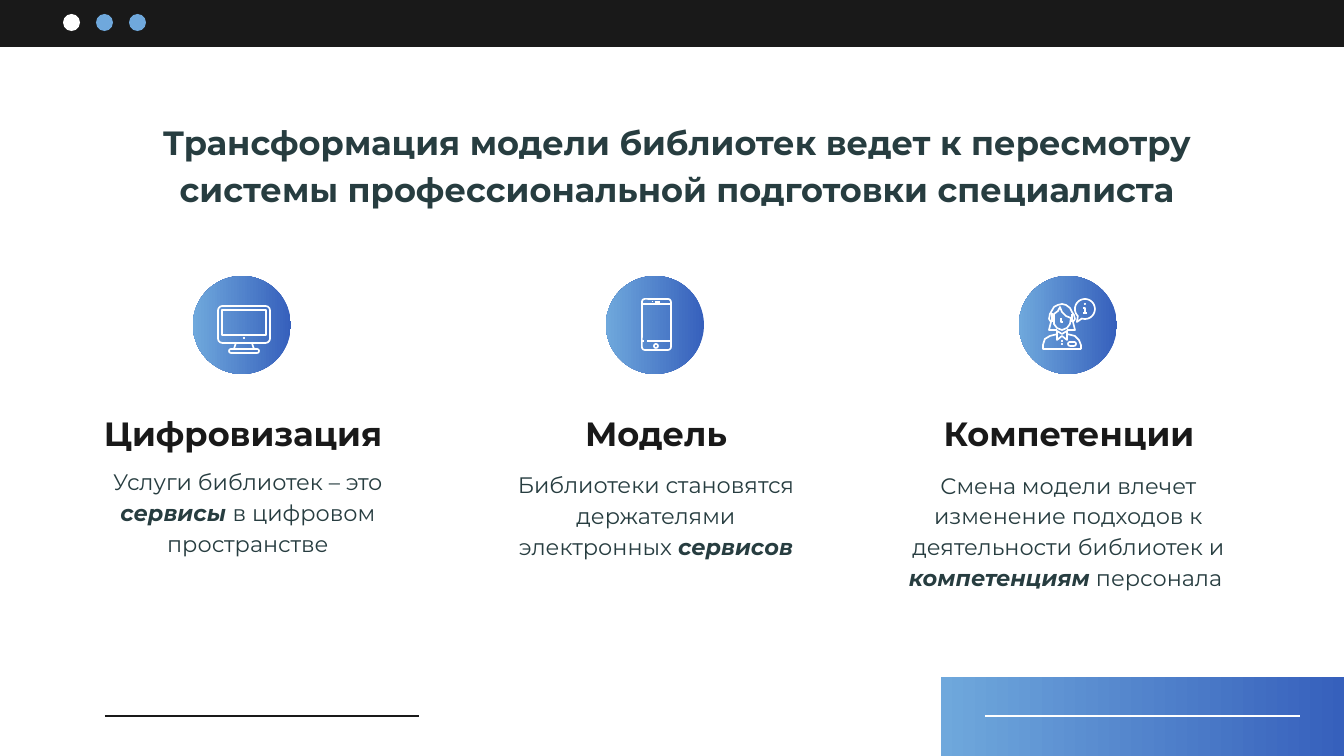
import math

from lxml import etree
from pptx import Presentation
from pptx.dml.color import RGBColor
from pptx.enum.shapes import MSO_CONNECTOR, MSO_SHAPE
from pptx.enum.text import MSO_ANCHOR, MSO_AUTO_SIZE, PP_ALIGN
from pptx.oxml.ns import qn
from pptx.util import Pt

PX = 914400 / 134.4
RECTANGLE, ROUNDED, OVAL = MSO_SHAPE.RECTANGLE, MSO_SHAPE.ROUNDED_RECTANGLE, MSO_SHAPE.OVAL
STRAIGHT = MSO_CONNECTOR.STRAIGHT
MIDDLE, CENTER, NO_FIT = MSO_ANCHOR.MIDDLE, PP_ALIGN.CENTER, MSO_AUTO_SIZE.NONE
FONT = "Montserrat"
BLACK, WHITE, TEAL = "191919", "FFFFFF", "273D40"
SKY, BLUE = "6FA8DC", "3660BC"
COLUMN_STEP = 413
INSET = 13


def px(value):
    return round(value * PX)


def rgb(color):
    return RGBColor.from_string(color)


# Drawing helpers
def add_filled(shapes, kind, box, color=None):
    """A shape in one colour, or in the blue gradient if none is given."""
    shape = shapes.add_shape(kind, *map(px, box))
    shape.shadow.inherit = False
    shape.line.fill.background()
    if color:
        shape.fill.solid()
        shape.fill.fore_color.rgb = rgb(color)
    else:
        shape.fill.gradient()
        shape.fill.gradient_angle = 180
        for stop, stop_color in zip(shape.fill.gradient_stops, (BLUE, SKY)):
            stop.color.rgb = rgb(stop_color)
    return shape


def add_rule(shapes, left, top, width, color):
    line = shapes.add_connector(STRAIGHT, px(left), px(top), px(left + width), px(top))
    line.line.color.rgb = rgb(color)
    line.line.width = Pt(0.75)
    etree.SubElement(line._element.spPr, qn("a:effectLst"))


def style_outline(shape):
    shape.shadow.inherit = False
    shape.fill.background()
    shape.line.color.rgb = rgb(WHITE)
    shape.line.width = Pt(0.9)


class Icon:
    """A group of white strokes placed relative to one corner."""

    def __init__(self, slide, left, top):
        self.left, self.top = left, top
        self.shapes = slide.shapes.add_group_shape().shapes

    def frame(self, kind, left, top, width, height, radius=0):
        box = (self.left + left, self.top + top, width, height)
        shape = self.shapes.add_shape(kind, *map(px, box))
        if radius:
            shape.adjustments[0] = radius
        style_outline(shape)

    def dot(self, left, top, size=2):
        add_filled(self.shapes, OVAL, (self.left + left, self.top + top, size, size), WHITE)

    def stroke(self, points, close=False):
        points = [(px(x), px(y)) for x, y in points]
        builder = self.shapes.build_freeform(*points[0])
        builder.add_line_segments(points[1:], close=close)
        style_outline(builder.convert_to_shape(px(self.left), px(self.top)))


# Icons
def draw_monitor(icon):
    icon.frame(ROUNDED, 25, 30, 52, 37, 0.12)
    icon.frame(RECTANGLE, 29, 34, 44, 25)
    icon.dot(50, 61)
    icon.stroke([(43, 67), (41, 73), (61, 73), (59, 67)])
    icon.frame(ROUNDED, 36, 73, 30, 4, 0.5)


def draw_phone(icon):
    icon.frame(ROUNDED, 36, 23, 29, 51, 0.1)
    icon.stroke([(36, 28), (65, 28)])
    icon.stroke([(36, 65), (38, 65)])
    icon.stroke([(41, 65), (65, 65)])
    icon.stroke([(49, 26), (54, 26)])
    icon.dot(46, 25, 1)
    icon.frame(OVAL, 48, 68, 4, 4)


def draw_consultant(icon):
    # Speech bubble
    angles = [math.radians(angle) for angle in range(135, 469, 9)]
    rim = [(66 + 10 * math.cos(a), 33 + 10 * math.sin(a)) for a in angles]
    icon.stroke(rim + [(58, 46)], close=True)
    icon.dot(65, 27)
    icon.stroke([(64, 32), (66, 32), (66, 37)])
    icon.stroke([(64, 37), (68, 37)])
    # Hair and face
    icon.stroke([(38, 54), (30, 54), (32, 46), (30, 43), (31, 38), (35, 31), (39, 29),
                 (43, 28), (47, 29), (51, 32), (53, 36), (55, 39), (56, 43), (54, 46),
                 (56, 54), (48, 54)])
    icon.stroke([(35, 38), (39, 35), (41, 31), (43, 36), (47, 40), (52, 42), (51, 48),
                 (48, 52), (43, 54), (38, 52), (35, 48)], close=True)
    icon.stroke([(33, 37), (33, 46)])
    icon.stroke([(53, 38), (53, 46)])
    icon.stroke([(42, 42), (42, 46), (44, 46)])
    # Shoulders, bow and badge
    icon.stroke([(39, 58), (31, 60), (26, 63), (24, 69), (24, 73), (62, 73), (62, 69),
                 (60, 64), (56, 60), (48, 58)])
    icon.stroke([(38, 55), (38, 64), (43, 60), (48, 64), (48, 55), (43, 58)], close=True)
    icon.dot(42, 64)
    icon.dot(42, 67)
    icon.frame(ROUNDED, 49, 66, 8, 4, 0.5)


# Text
def set_text(shape, box, paragraphs, size, color, bold=False, spacing=1.15,
             indent=0, bottom_inset=INSET):
    """Each paragraph is a list of runs; every second run is bold italic."""
    shape.left, shape.top, shape.width, shape.height = map(px, box)
    frame = shape.text_frame
    frame.word_wrap, frame.auto_size = True, NO_FIT
    frame.vertical_anchor = MIDDLE
    frame.margin_left = frame.margin_right = frame.margin_top = px(INSET)
    frame.margin_bottom = px(bottom_inset)
    for number, runs in enumerate(paragraphs):
        paragraph = frame.add_paragraph() if number else frame.paragraphs[0]
        properties = paragraph._p.get_or_add_pPr()
        properties.set("marL", str(px(indent)))
        properties.set("indent", "0")
        etree.SubElement(properties, qn("a:buNone"))
        paragraph.alignment = CENTER
        paragraph.line_spacing = spacing
        paragraph.space_before = Pt(0)
        font = paragraph.font
        font.name, font.size, font.bold = FONT, Pt(size), bold
        font.color.rgb = rgb(color)
        for index, text in enumerate(runs):
            run = paragraph.add_run()
            run.text = text
            if index % 2:
                run.font.bold = run.font.italic = True


# Regions
def draw_frame(slide):
    shapes = slide.shapes
    add_filled(shapes, RECTANGLE, (0, -1, 1344, 48), BLACK)
    for index, color in enumerate((WHITE, SKY, SKY)):
        add_filled(shapes, OVAL, (63 + 33 * index, 14, 17, 17), color)
    add_filled(shapes, RECTANGLE, (941, 677, 403, 79))
    add_rule(shapes, 985, 716, 315, WHITE)
    add_rule(shapes, 105, 716, 314, BLACK)


def draw_column(slide, left, heading, draw_icon, body, body_box, paragraphs, bottom_inset):
    top = 276
    add_filled(slide.shapes, OVAL, (left + 103, top, 98, 98))
    draw_icon(Icon(slide, left + 103, top))
    label = slide.shapes.add_textbox(0, 0, 0, 0)
    set_text(label, (left, top + 120, 306, 74), [[heading]], 18, BLACK, bold=True, spacing=1)
    offset, body_top, width = body_box
    set_text(body, (left + offset, top + body_top, width, 97), paragraphs, 12, TEAL,
             bottom_inset=bottom_inset)


COLUMNS = [
    ("Цифровизация", draw_monitor, (5, 186, 306),
     [["Услуги библиотек – это ", "сервисы ", "в цифровом пространстве"]], INSET),
    ("Модель", draw_phone, (0, 205, 306),
     [["Библиотеки становятся держателями электронных ", "сервисов"]], 44),
    ("Компетенции", draw_consultant, (-33, 205, 371),
     [["Смена модели влечет изменение подходов к"],
      ["деятельности библиотек и ", "компетенциям", " персонала "]], INSET),
]


def main():
    presentation = Presentation()
    presentation.slide_width, presentation.slide_height = px(1344), px(756)
    slide = presentation.slides.add_slide(presentation.slide_layouts[4])
    title, *bodies, spare = slide.placeholders
    spare._element.getparent().remove(spare._element)

    draw_frame(slide)
    set_text(title, (77, 120, 1133, 85),
             [["Трансформация модели библиотек ведет к пересмотру "
               "системы профессиональной подготовки специалиста"]],
             18, TEAL, bold=True, indent=67)
    for index, (heading, draw_icon, body_box, paragraphs, inset) in enumerate(COLUMNS):
        draw_column(slide, 90 + COLUMN_STEP * index, heading, draw_icon, bodies[index],
                    body_box, paragraphs, inset)
    presentation.save("out.pptx")


if __name__ == "__main__":
    main()
